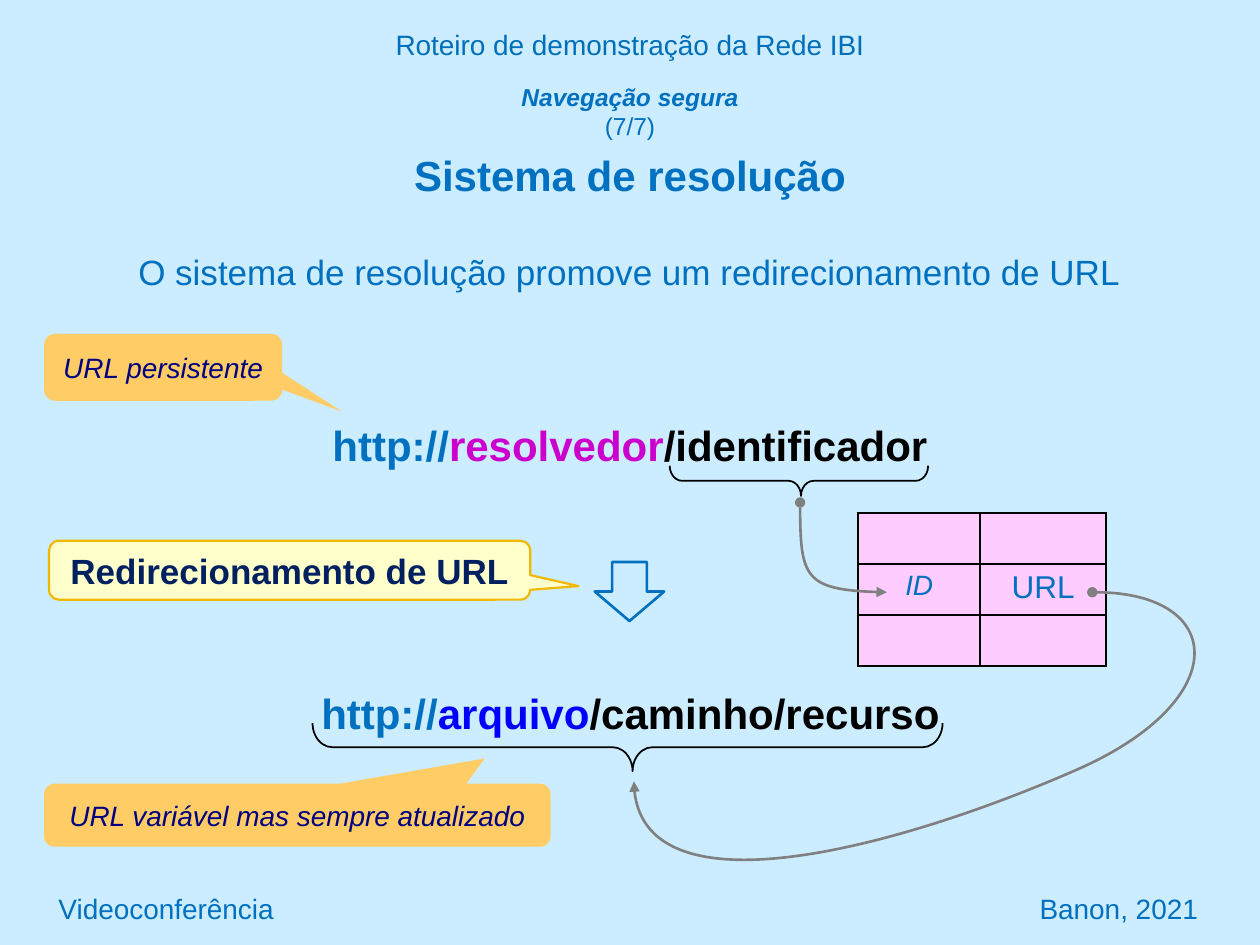
from lxml import etree
from pptx import Presentation
from pptx.dml.color import RGBColor
from pptx.enum import shapes, text
from pptx.oxml import ns
from pptx.util import Cm, Pt

COLORS = {
    "background": "CCECFF", "header": "006FBA", "blue": "0070C0",
    "black": "000000", "magenta": "CC00CC", "link": "0000FF",
    "navy": "000080", "dark": "002060", "orange": "FFCC66",
    "yellow": "FFFFCC", "gold": "F2B800", "pink": "FFCCFF", "grey": "808080",
}
CENTER = text.PP_ALIGN.CENTER
MIDDLE = text.MSO_ANCHOR.MIDDLE
SHAPE = shapes.MSO_SHAPE


def rgb(name):
    return RGBColor.from_string(COLORS[name])


def sub(parent, tag, **attrs):
    return etree.SubElement(parent, ns.qn(tag), attrs)


def add_run(p, content, size, color="blue", bold=False, italic=False):
    r = p.add_run()
    r.text = content
    r.font.name = "Arial"
    r.font.size = Pt(size)
    r.font.bold = bold
    r.font.italic = italic
    r.font.color.rgb = rgb(color)


def add_text(s, box, runs, align=CENTER):
    sp = s.shapes.add_textbox(*map(Cm, box))
    tf = sp.text_frame
    tf.word_wrap = True
    p = tf.paragraphs[0]
    p.alignment = align
    for run in runs:
        add_run(p, *run)
    return sp


def add_title(s):
    sp = s.shapes.title
    sp.left, sp.top, sp.width, sp.height = map(Cm, (1.9, 1.52, 21.6, 2.49))
    tf = sp.text_frame
    tf.word_wrap = True
    tf.auto_size = text.MSO_AUTO_SIZE.NONE
    tf.vertical_anchor = text.MSO_ANCHOR.TOP
    p = tf.paragraphs[0]
    add_run(p, "Navegação segura", 14, bold=True, italic=True)
    p.add_line_break()
    add_run(p, "(7/7)", 14)
    p = tf.add_paragraph()
    p.space_before = Pt(5)
    add_run(p, "Sistema de resolução", 24, bold=True)
    for p in tf.paragraphs:
        p.alignment = CENTER


def add_footer(s, left, right):
    sp = add_text(s, (0, 17.78, 25.4, 1.07), [(f"{left}\t{right}", 16)],
                  text.PP_ALIGN.LEFT)
    tf = sp.text_frame
    tf.margin_left = Cm(1.18)
    tf.vertical_anchor = MIDDLE
    tabs = sub(tf.paragraphs[0]._p.get_or_add_pPr(), "a:tabLst")
    sub(tabs, "a:tab", pos=str(Cm(22.97)), algn="r")


def style_shape(sp, fill=None, line=None, width=1):
    sp.shadow.inherit = False
    if fill:
        sp.fill.solid()
        sp.fill.fore_color.rgb = rgb(fill)
    else:
        sp.fill.background()
    if line:
        sp.line.color.rgb = rgb(line)
        sp.line.width = Pt(width)
    else:
        sp.line.fill.background()


def add_callout(s, box, tip, run, fill, line=None):
    sp = s.shapes.add_shape(SHAPE.ROUNDED_RECTANGULAR_CALLOUT, *map(Cm, box))
    sp.adjustments[0], sp.adjustments[1] = tip
    style_shape(sp, fill, line, 1.25)
    tf = sp.text_frame
    tf.word_wrap = True
    tf.vertical_anchor = MIDDLE
    p = tf.paragraphs[0]
    p.alignment = CENTER
    add_run(p, *run)


def add_brace(s, left, top, length, depth):
    x = left + (length - depth) / 2
    y = top - (length - depth) / 2
    sp = s.shapes.add_shape(SHAPE.LEFT_BRACE, Cm(x), Cm(y), Cm(depth), Cm(length))
    sp.adjustments[0], sp.adjustments[1] = 0.412, 0.492
    sp.rotation = 270
    sp._element.spPr.find(ns.qn("a:xfrm")).set("flipV", "1")
    style_shape(sp, line="black")


def add_curve(s, points, width, height):
    start, *rest = [(Cm(x), Cm(y)) for x, y in points]
    builder = s.shapes.build_freeform(*start)
    builder.add_line_segments(rest, close=False)
    sp = builder.convert_to_shape()
    sp.width, sp.height = Cm(width), Cm(height)
    path = next(sp._element.iter(ns.qn("a:path")))
    path.set("w", str(sp.width))
    path.set("h", str(sp.height))
    lines = path.findall(ns.qn("a:lnTo"))
    for i in range(0, len(lines), 3):
        curve = sub(path, "a:cubicBezTo")
        for line in lines[i:i + 3]:
            curve.append(line[0])
            path.remove(line)
    style_shape(sp, line="grey", width=1.5)
    ln = sp.line._get_or_add_ln()
    sub(ln, "a:headEnd", type="oval")
    sub(ln, "a:tailEnd", type="triangle")


def style_cell(cell):
    tcPr = cell._tc.get_or_add_tcPr()
    for side in "LRTB":
        ln = sub(tcPr, f"a:ln{side}", w=str(Pt(1)))
        sub(sub(ln, "a:solidFill"), "a:srgbClr", val=COLORS["black"])
    cell.fill.solid()
    cell.fill.fore_color.rgb = rgb("pink")


def add_table(s):
    table = s.shapes.add_table(3, 2, *map(Cm, (17.3, 10.34, 5, 3.09))).table
    table.first_row = table.horz_banding = False
    for column, width in zip(table.columns, (2.46, 2.54)):
        column.width = Cm(width)
    for row in table.rows:
        row.height = Cm(1.03)
    for cell in table.iter_cells():
        style_cell(cell)
    for column, (label, size, italic) in enumerate([("ID", 16, True), ("URL", 18, False)]):
        p = table.cell(1, column).text_frame.paragraphs[0]
        p.alignment = CENTER
        add_run(p, label, size, italic=italic)


def add_url(s, box, host, color, rest):
    add_text(s, box, [("http://", 24, "blue", True), (host, 24, color, True),
                      (rest, 24, "black", True)])


def main():
    prs = Presentation()
    prs.slide_width, prs.slide_height = Cm(25.4), Cm(19.05)
    s = prs.slides.add_slide(prs.slide_layouts[5])
    s.background.fill.solid()
    s.background.fill.fore_color.rgb = rgb("background")

    add_text(s, (0, 0.43, 25.4, 0.94),
             [("Roteiro de demonstração da Rede IBI", 16, "header")])
    add_footer(s, "Videoconferência", "Banon, 2021")
    add_title(s)
    add_text(s, (2.34, 4.93, 20.7, 1.12),
             [("O sistema de resolução promove um redirecionamento de URL", 20)])
    add_url(s, (5.33, 13.74, 14.76, 1.27), "arquivo", "link", "/caminho/recurso")
    add_url(s, (6.35, 8.33, 12.7, 1.27), "resolvedor", "magenta", "/identificador")

    add_callout(s, (0.89, 6.73, 4.8, 1.35), (0.75, 0.66),
                ("URL persistente", 16, "navy", False, True), "orange")
    add_callout(s, (0.89, 15.8, 10.21, 1.27), (0.37, -0.9),
                ("URL variável mas sempre atualizado", 16, "navy", False, True), "orange")
    arrow = s.shapes.add_shape(SHAPE.DOWN_ARROW, *map(Cm, (11.99, 11.33, 1.4, 1.19)))
    style_shape(arrow, line="blue", width=1.5)
    add_table(s)
    add_curve(s, [(16.13, 10.13), (16.13, 11.63), (16.23, 11.91), (17.88, 11.94)],
              1.75, 1.81)
    add_curve(s, [(22.02, 11.94), (24.71, 11.91), (24.87, 14.1), (21.77, 15.49),
                  (18.26, 17.04), (12.8, 18.57), (12.78, 15.75)], 11.28, 5.41)
    add_brace(s, 6.3, 14.58, 12.7, 0.97)
    add_brace(s, 13.5, 9.39, 5.21, 0.61)
    add_callout(s, (0.99, 10.9, 9.7, 1.19), (0.6, 0.27),
                ("Redirecionamento de URL", 20, "dark", True), "yellow", "gold")
    prs.save("out.pptx")


if __name__ == "__main__":
    main()
